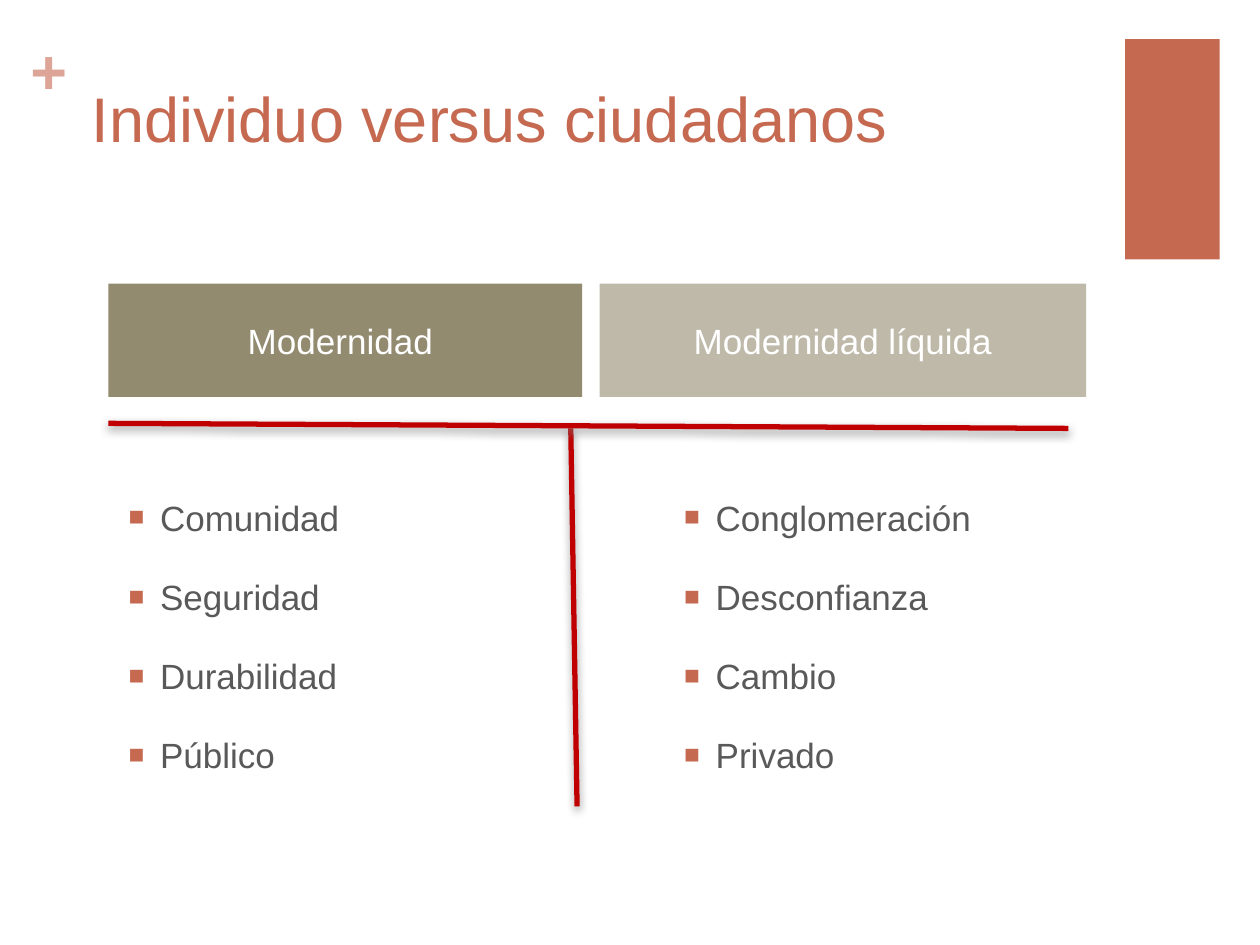
"""Build a slide that contrasts modernity with liquid modernity in two columns."""
from lxml import etree
from pptx import Presentation, util as u
from pptx.dml.color import RGBColor
from pptx.enum import shapes, text
from pptx.oxml import ns

COLORS = {"accent": "C66951", "plus": "DDA597", "olive": "928B70", "sand": "BEB9A9",
          "white": "FFFFFF", "body": "595959", "rule": "C00000", "shadow": "808080"}
TITLE = "Individuo versus ciudadanos"
COLUMNS = [
    {"head": "Modernidad ", "fill": "olive", "left": 0.86, "width": 3.76, "list_left": 0.92,
     "items": ["Comunidad", "Seguridad", "Durabilidad", "Público"]},
    {"head": "Modernidad líquida", "fill": "sand", "left": 4.76, "width": 3.86, "list_left": 5.33,
     "items": ["Conglomeración", "Desconfianza", "Cambio", "Privado"]},
]
RULES = [(4.53, 3.4, 4.58, 6.4), (0.86, 3.36, 8.48, 3.4)]
HEAD_TOP, HEAD_HEIGHT = 2.25, 0.9
LIST_TOP, LIST_WIDTH, LIST_HEIGHT = 3.87, 3.97, 2.36
INDENT = u.Inches(0.25)


def color(name):
    return RGBColor.from_string(COLORS[name])


def place(shape, *lengths):
    for side, length in zip(("left", "top", "width", "height"), lengths):
        setattr(shape, side, u.Inches(length))


def paint(shape, name):
    shape.fill.solid()
    shape.fill.fore_color.rgb = color(name)


def write(shape, lines, size, name, anchor=text.MSO_ANCHOR.TOP, inset=0.05, side=0.1,
          bold=False, **paragraph_format):
    frame = shape.text_frame
    frame.text = "\n".join(lines)
    frame_format = {"word_wrap": True, "auto_size": text.MSO_AUTO_SIZE.NONE,
                    "vertical_anchor": anchor,
                    "margin_top": u.Inches(inset), "margin_bottom": u.Inches(inset),
                    "margin_left": u.Inches(side), "margin_right": u.Inches(side)}
    for key, value in frame_format.items():
        setattr(frame, key, value)
    for para in frame.paragraphs:
        for key, value in paragraph_format.items():
            setattr(para, key, value)
        for span in para.runs:
            for key, value in {"name": "Arial", "size": u.Pt(size), "bold": bold}.items():
                setattr(span.font, key, value)
            span.font.color.rgb = color(name)


def add_node(parent, tag, **attributes):
    return etree.SubElement(parent, ns.qn(tag), attributes)


def add_bullets(shape):
    for para in shape.text_frame.paragraphs:
        properties = para._p.get_or_add_pPr()
        properties.set("marL", str(INDENT))
        properties.set("indent", str(-INDENT))
        add_node(add_node(properties, "a:buClr"), "a:srgbClr", val=COLORS["accent"])
        add_node(properties, "a:buSzPct", val="75000")
        add_node(properties, "a:buFont", typeface="Arial")
        add_node(properties, "a:buChar", char="■")


def add_rule(page, ends):
    rule = page.shapes.add_connector(shapes.MSO_CONNECTOR.STRAIGHT, *map(u.Inches, ends))
    rule.line.color.rgb = color("rule")
    rule.line.width = u.Pt(3)
    effects = add_node(rule._element.spPr, "a:effectLst")
    shadow = add_node(effects, "a:outerShdw", blurRad=str(u.Pt(5)), dist=str(u.Pt(2)),
                      dir="5400000", rotWithShape="0")
    tint = add_node(shadow, "a:srgbClr", val=COLORS["shadow"])
    add_node(tint, "a:alpha", val="75000")


def main():
    deck = Presentation()
    deck.slide_width, deck.slide_height = u.Inches(10), u.Inches(7.5)
    page = deck.slides.add_slide(deck.slide_layouts.get_by_name("Comparison"))
    title, *bodies = [box for box in page.placeholders if box.placeholder_format.idx < 10]

    block = page.shapes.add_shape(shapes.MSO_SHAPE.RECTANGLE, 0, 0, 0, 0)
    place(block, 8.93, 0.31, 0.75, 1.75)
    paint(block, "accent")
    block.line.fill.background()
    block.shadow.inherit = False
    plus = page.shapes.add_textbox(0, 0, 0, 0)
    place(plus, 0.24, 0.25, 0.29, 0.61)
    write(plus, ["+"], 36, "plus", inset=0, side=0, bold=True)

    place(title, 0.63, 0.53, 8.26, 1.22)
    write(title, [TITLE], 36, "accent", inset=0.1, alignment=text.PP_ALIGN.LEFT)

    for column, head, points in zip(COLUMNS, bodies[::2], bodies[1::2]):
        place(head, column["left"], HEAD_TOP, column["width"], HEAD_HEIGHT)
        paint(head, column["fill"])
        write(head, [column["head"]], 20, "white", text.MSO_ANCHOR.MIDDLE, inset=0,
              alignment=text.PP_ALIGN.CENTER, space_before=u.Pt(0))
        place(points, column["list_left"], LIST_TOP, LIST_WIDTH, LIST_HEIGHT)
        write(points, column["items"], 20, "body", space_before=u.Pt(20), line_spacing=1.05)
        add_bullets(points)

    for ends in RULES:
        add_rule(page, ends)
    deck.save("out.pptx")


if __name__ == "__main__":
    main()
